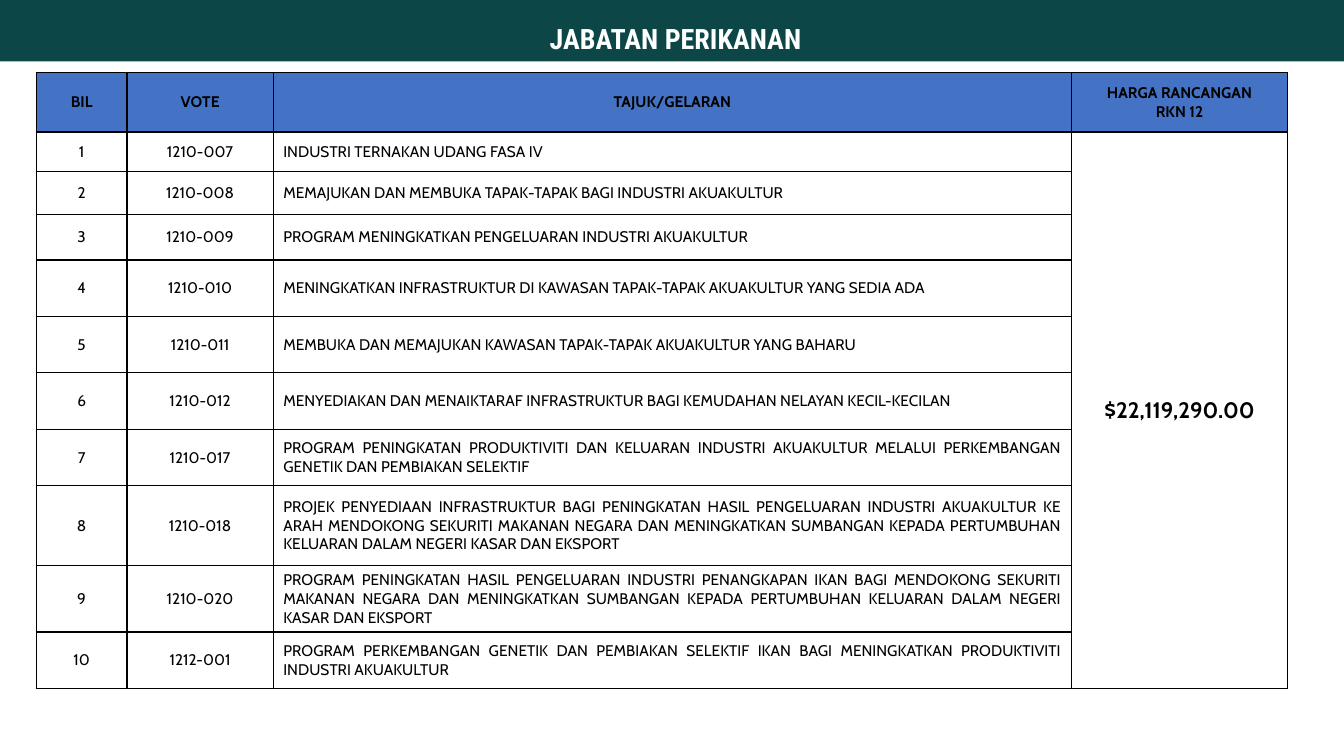
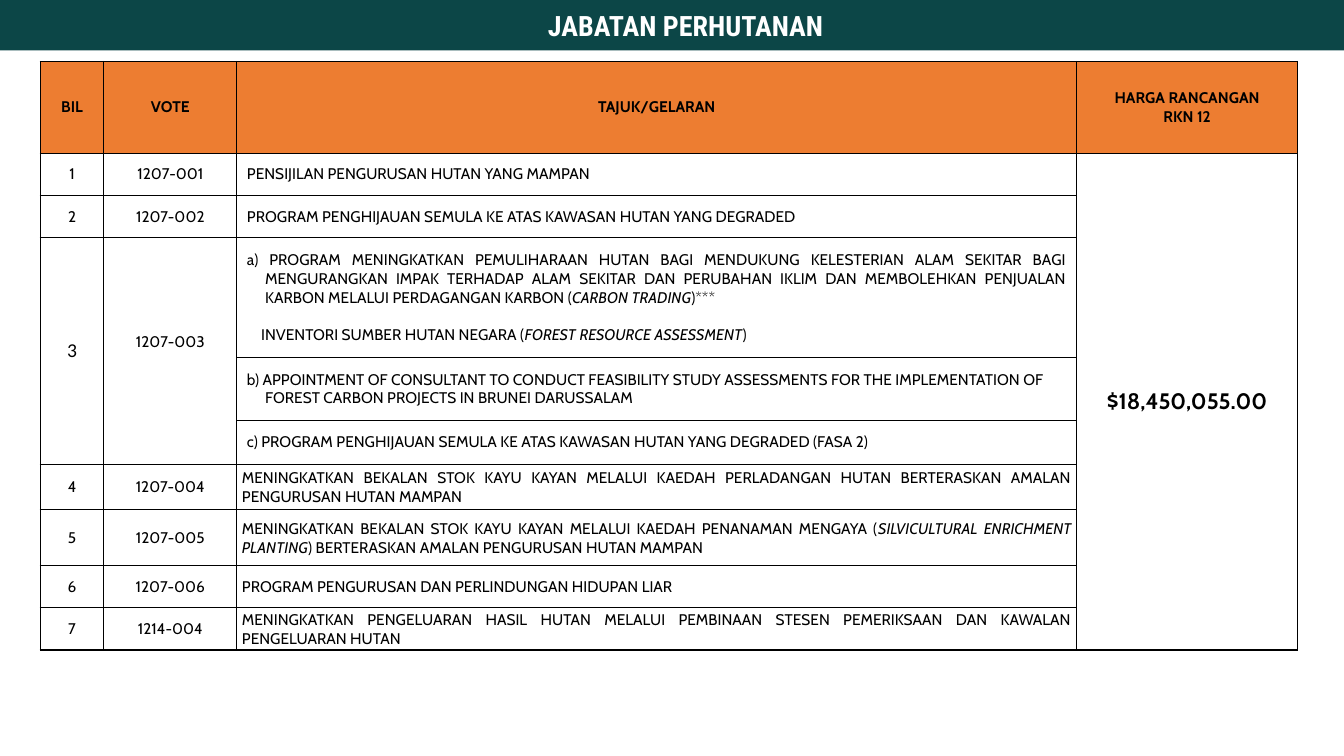
from lxml import etree
from pptx import Presentation
from pptx.dml.color import RGBColor
from pptx.enum.shapes import MSO_SHAPE
from pptx.enum.text import MSO_ANCHOR, MSO_AUTO_SIZE, PP_ALIGN
from pptx.oxml.ns import qn
from pptx.util import Inches, Pt

SLIDE_WIDTH, SLIDE_HEIGHT = 13.33, 7.5
BAND_COLOUR, WHITE, BLACK = "0C4647", "FFFFFF", "000000"
BLUE, ORANGE = "4472C4", "ED7D31"
TITLE_FONT, TABLE_FONT = "Roboto Condensed", "Cabin"
TABLE_SIZE, PRICE_SIZE = 11, 16
HEADERS = ["BIL", "VOTE", "TAJUK/GELARAN", "HARGA RANCANGAN\nRKN 12"]
TITLE_COLUMN, PRICE_COLUMN = 2, 3

# Each row: height, number, vote, title; _underscores_ enclose italics.
FISHERIES_ROWS = [
    (0.39, "1", "1210-007", "INDUSTRI TERNAKAN UDANG FASA IV"),
    (0.43, "2", "1210-008", "MEMAJUKAN DAN MEMBUKA TAPAK-TAPAK BAGI INDUSTRI AKUAKULTUR"),
    (0.45, "3", "1210-009", "PROGRAM MENINGKATKAN PENGELUARAN INDUSTRI AKUAKULTUR"),
    (0.56, "4", "1210-010",
     "MENINGKATKAN INFRASTRUKTUR DI KAWASAN TAPAK-TAPAK AKUAKULTUR YANG SEDIA ADA"),
    (0.56, "5", "1210-011",
     "MEMBUKA DAN MEMAJUKAN KAWASAN TAPAK-TAPAK AKUAKULTUR YANG BAHARU"),
    (0.56, "6", "1210-012",
     "MENYEDIAKAN DAN MENAIKTARAF INFRASTRUKTUR BAGI KEMUDAHAN NELAYAN KECIL-KECILAN"),
    (0.56, "7", "1210-017",
     "PROGRAM PENINGKATAN PRODUKTIVITI DAN KELUARAN INDUSTRI AKUAKULTUR MELALUI "
     "PERKEMBANGAN GENETIK DAN PEMBIAKAN SELEKTIF"),
    (0.79, "8", "1210-018",
     "PROJEK PENYEDIAAN INFRASTRUKTUR BAGI PENINGKATAN HASIL PENGELUARAN INDUSTRI "
     "AKUAKULTUR KE ARAH MENDOKONG SEKURITI MAKANAN NEGARA DAN MENINGKATKAN SUMBANGAN "
     "KEPADA PERTUMBUHAN KELUARAN DALAM NEGERI KASAR DAN EKSPORT"),
    (0.65, "9", "1210-020",
     "PROGRAM PENINGKATAN HASIL PENGELUARAN INDUSTRI PENANGKAPAN IKAN BAGI MENDOKONG "
     "SEKURITI MAKANAN NEGARA DAN MENINGKATKAN SUMBANGAN KEPADA PERTUMBUHAN KELUARAN "
     "DALAM NEGERI KASAR DAN EKSPORT"),
    (0.56, "10", "1212-001",
     "PROGRAM PERKEMBANGAN GENETIK DAN PEMBIAKAN SELEKTIF IKAN BAGI MENINGKATKAN "
     "PRODUKTIVITI INDUSTRI AKUAKULTUR"),
]
FORESTRY_ROWS = [
    (0.42, "1", "1207-001", "PENSIJILAN PENGURUSAN HUTAN YANG MAMPAN"),
    (0.42, "2", "1207-002", "PROGRAM PENGHIJAUAN SEMULA KE ATAS KAWASAN HUTAN YANG DEGRADED"),
    (1.19, "3", "1207-003",
     "a) PROGRAM MENINGKATKAN PEMULIHARAAN HUTAN BAGI MENDUKUNG KELESTERIAN ALAM SEKITAR "
     "BAGI MENGURANGKAN IMPAK TERHADAP ALAM SEKITAR DAN PERUBAHAN IKLIM DAN MEMBOLEHKAN "
     "PENJUALAN KARBON MELALUI PERDAGANGAN KARBON (_CARBON TRADING_)***\n"
     "INVENTORI SUMBER HUTAN NEGARA (_FOREST RESOURCE ASSESSMENT_)"),
    (0.62, "", "",
     "b) APPOINTMENT OF CONSULTANT TO CONDUCT FEASIBILITY STUDY ASSESSMENTS FOR THE "
     "IMPLEMENTATION OF FOREST CARBON PROJECTS IN BRUNEI DARUSSALAM"),
    (0.44, "", "", "c) PROGRAM PENGHIJAUAN SEMULA KE ATAS KAWASAN HUTAN YANG DEGRADED (FASA 2)"),
    (0.45, "4", "1207-004",
     "MENINGKATKAN BEKALAN STOK KAYU KAYAN MELALUI KAEDAH PERLADANGAN HUTAN BERTERASKAN "
     "AMALAN PENGURUSAN HUTAN MAMPAN"),
    (0.55, "5", "1207-005",
     "MENINGKATKAN BEKALAN STOK KAYU KAYAN MELALUI KAEDAH PENANAMAN MENGAYA "
     "(_SILVICULTURAL ENRICHMENT PLANTING_) BERTERASKAN AMALAN PENGURUSAN HUTAN MAMPAN"),
    (0.42, "6", "1207-006", "PROGRAM PENGURUSAN DAN PERLINDUNGAN HIDUPAN LIAR"),
    (0.42, "7", "1214-004",
     "MENINGKATKAN PENGELUARAN HASIL HUTAN MELALUI PEMBINAAN STESEN PEMERIKSAAN DAN "
     "KAWALAN PENGELUARAN HUTAN"),
]


def colour(hex_value):
    return RGBColor.from_string(hex_value)


def set_font(paragraph, name, size, hex_value, bold=False):
    font = paragraph.font
    font.name, font.size, font.bold = name, Pt(size), bold
    font.color.rgb = colour(hex_value)


def add_title_slide(presentation, title_text, band_height, left, top, line_spacing):
    """Add a slide whose title lies on a dark band across the top."""
    slide = presentation.slides.add_slide(presentation.slide_layouts[5])
    band = slide.shapes.add_shape(
        MSO_SHAPE.RECTANGLE, 0, 0, Inches(SLIDE_WIDTH), Inches(band_height))
    band.shadow.inherit = False
    band.fill.solid()
    band.fill.fore_color.rgb = colour(BAND_COLOUR)
    band.line.fill.background()

    title = slide.shapes.title
    title.element.addprevious(band.element)
    title.left, title.top = Inches(left), Inches(top)
    title.width = Inches(SLIDE_WIDTH - left)
    title.height = Inches(band_height - 2 * top)
    frame = title.text_frame
    frame.text = title_text
    frame.word_wrap = True
    frame.auto_size = MSO_AUTO_SIZE.NONE
    frame.vertical_anchor = MSO_ANCHOR.TOP
    paragraph = frame.paragraphs[0]
    paragraph.alignment = PP_ALIGN.CENTER
    paragraph.line_spacing = line_spacing
    set_font(paragraph, TITLE_FONT, 20, WHITE, bold=True)
    return slide


def set_borders(cell):
    properties = cell._tc.get_or_add_tcPr()
    for side in ("a:lnL", "a:lnR", "a:lnT", "a:lnB"):
        line = etree.SubElement(properties, qn(side), w=str(Pt(1)))
        fill = etree.SubElement(line, qn("a:solidFill"))
        etree.SubElement(fill, qn("a:srgbClr"), val=BLACK)


def set_margins(cell, horizontal, top, bottom):
    cell.margin_left = cell.margin_right = Inches(horizontal)
    cell.margin_top, cell.margin_bottom = Inches(top), Inches(bottom)


def set_indent(paragraph, left, first_line=0):
    properties = paragraph._p.get_or_add_pPr()
    properties.set("marL", str(Inches(left)))
    properties.set("indent", str(Inches(first_line)))


def write_cell(cell, text, alignment=PP_ALIGN.CENTER, size=TABLE_SIZE, bold=False):
    """Write one paragraph per line, with _underscored_ parts in italics."""
    frame = cell.text_frame
    for index, line in enumerate(text.split("\n")):
        paragraph = frame.add_paragraph() if index else frame.paragraphs[0]
        paragraph.alignment = alignment
        set_font(paragraph, TABLE_FONT, size, BLACK, bold)
        for part_index, part in enumerate(line.split("_")):
            if part:
                run = paragraph.add_run()
                run.text = part
                if part_index % 2:
                    run.font.italic = True


def add_vote_table(slide, left, top, widths, header_height, header_colour, rows, price):
    heights = [header_height] + [row[0] for row in rows]
    table = slide.shapes.add_table(
        len(heights), len(widths), Inches(left), Inches(top),
        Inches(sum(widths)), Inches(sum(heights))).table
    table.first_row = table.horz_banding = False
    for column, width in zip(table.columns, widths):
        column.width = Inches(width)
    for row, height in zip(table.rows, heights):
        row.height = Inches(height)

    for cell in table.iter_cells():
        set_margins(cell, 0.1, 0.05, 0.05)
        cell.vertical_anchor = MSO_ANCHOR.MIDDLE
        set_borders(cell)
        cell.fill.background()
    for column_index, header in enumerate(HEADERS):
        cell = table.cell(0, column_index)
        cell.fill.solid()
        cell.fill.fore_color.rgb = colour(header_colour)
        write_cell(cell, header, bold=True)
    for row_index, (_, *texts) in enumerate(rows, start=1):
        for column_index, text in enumerate(texts):
            is_title = column_index == TITLE_COLUMN
            write_cell(table.cell(row_index, column_index), text,
                       PP_ALIGN.JUSTIFY if is_title else PP_ALIGN.CENTER)

    price_cell = table.cell(1, PRICE_COLUMN)
    price_cell.merge(table.cell(len(rows), PRICE_COLUMN))
    write_cell(price_cell, price, size=PRICE_SIZE, bold=True)
    return table


def format_forestry_table(table):
    """Join the cells of vote 3, indent its parts and tighten the later titles."""
    number, vote = table.cell(3, 0), table.cell(3, 1)
    number.merge(table.cell(5, 0))
    vote.merge(table.cell(5, 1))
    set_font(number.text_frame.paragraphs[0], "Calibri", 14, BLACK)
    set_margins(vote, 0.1, 0.05, 0.23)

    part_a, inventory = table.cell(3, TITLE_COLUMN).text_frame.paragraphs
    part_b = table.cell(4, TITLE_COLUMN).text_frame.paragraphs[0]
    for part in (part_a, part_b):
        set_indent(part, 0.18, -0.18)
    part_b.alignment = PP_ALIGN.LEFT
    set_indent(inventory, 0.14)
    inventory.space_before = Pt(13.5)

    for row_index in range(6, 10):
        set_margins(table.cell(row_index, TITLE_COLUMN), 0.05, 0.01, 0)


def main():
    presentation = Presentation()
    presentation.slide_width = Inches(SLIDE_WIDTH)
    presentation.slide_height = Inches(SLIDE_HEIGHT)

    fisheries = add_title_slide(presentation, "JABATAN PERIKANAN", 0.61, 0.07, 0, 1.5)
    add_vote_table(fisheries, 0.36, 0.72, [0.9, 1.45, 7.92, 2.14], 0.59, BLUE,
                   FISHERIES_ROWS, "$22,119,290.00")

    forestry = add_title_slide(presentation, "JABATAN PERHUTANAN", 0.5, 0.27, 0.03, 1)
    table = add_vote_table(forestry, 0.4, 0.61, [0.63, 1.32, 8.33, 2.19], 0.91, ORANGE,
                           FORESTRY_ROWS, "$18,450,055.00")
    format_forestry_table(table)

    presentation.save("out.pptx")


if __name__ == "__main__":
    main()
